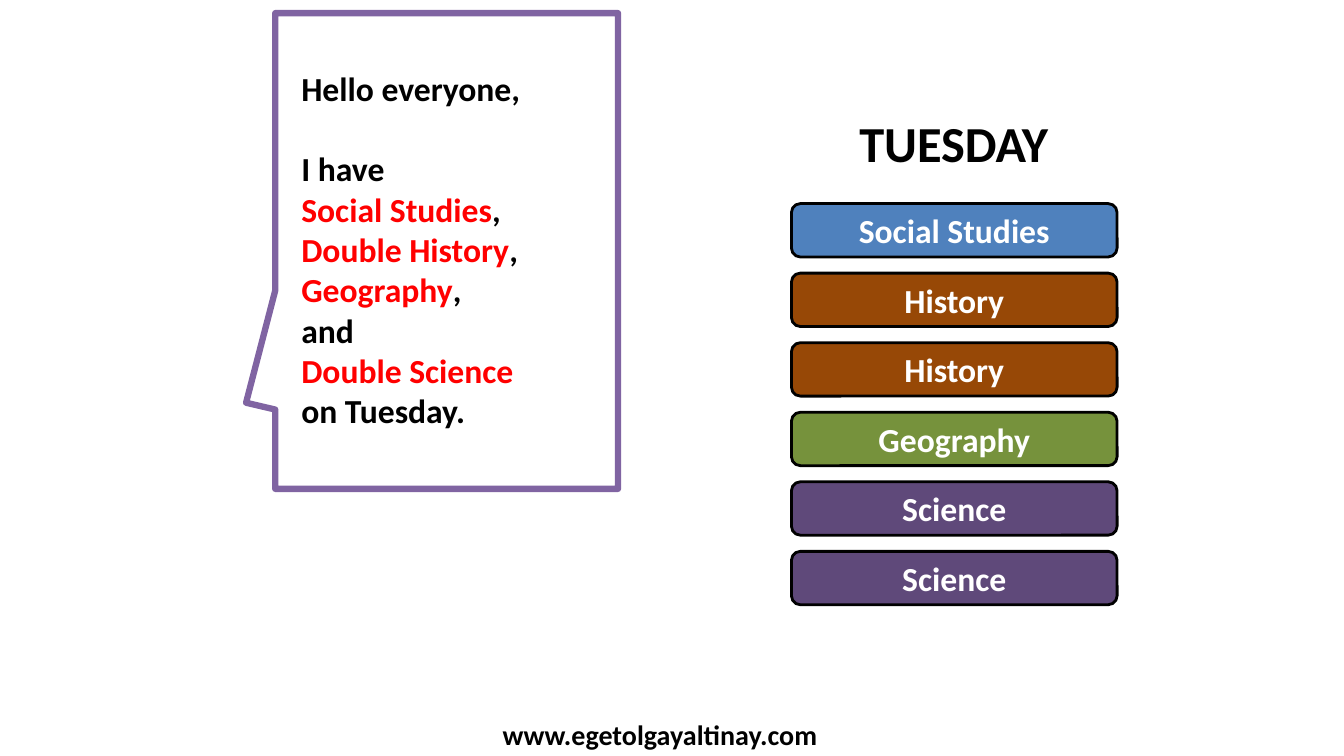
from dataclasses import dataclass
from pptx import Presentation
from pptx.dml.color import RGBColor
from pptx.enum.shapes import MSO_SHAPE
from pptx.enum.text import MSO_ANCHOR, MSO_AUTO_SIZE, PP_ALIGN
from pptx.util import Inches, Pt


@dataclass(frozen=True)
class Theme:
    """Colours, font and type sizes of the slide."""
    font: str = "Calibri"
    black: str = "000000"
    white: str = "FFFFFF"
    red: str = "FF0000"
    violet: str = "8064A2"
    blue: str = "4F81BD"
    brown: str = "974806"
    green: str = "76923C"
    purple: str = "5F497A"
    head: int = 36
    body: int = 24
    foot: int = 20
    space: int = 29


THEME = Theme()
SPEECH = [
    [("Hello everyone,", THEME.black)],
    [("I have", THEME.black)],
    [("Social Studies", THEME.red), (",", THEME.black)],
    [("Double History", THEME.red), (",", THEME.black)],
    [("Geography", THEME.red), (",", THEME.black)],
    [("and", THEME.black)],
    [("Double Science", THEME.red)],
    [("on Tuesday.", THEME.black)],
]
LESSONS = [
    ("Social Studies", THEME.blue),
    ("History", THEME.brown),
    ("History", THEME.brown),
    ("Geography", THEME.green),
    ("Science", THEME.purple),
    ("Science", THEME.purple),
]


def style(run, size, color):
    """Set the bold face, size and colour of a run."""
    font = run.font
    font.name, font.size, font.bold = THEME.font, Pt(size), True
    font.color.rgb = RGBColor.from_string(color)


def label(frame, text, size, color):
    """Write one centred line in a text frame."""
    frame.text = text
    frame.word_wrap = True
    frame.vertical_anchor = MSO_ANCHOR.MIDDLE
    line = frame.paragraphs[0]
    line.alignment = PP_ALIGN.CENTER
    style(line.runs[0], size, color)


def panel(slide, kind, box, fill, edge, width):
    """Draw a filled shape with an outline in the box."""
    shape = slide.shapes.add_shape(kind, *map(Inches, box))
    shape.shadow.inherit = False
    shape.fill.solid()
    shape.fill.fore_color.rgb = RGBColor.from_string(fill)
    shape.line.color.rgb = RGBColor.from_string(edge)
    shape.line.width = Pt(width)
    return shape


def title(slide, box):
    """Place the day in the title placeholder."""
    day = slide.shapes.title
    day.left, day.top, day.width, day.height = map(Inches, box)
    label(day.text_frame, "TUESDAY", THEME.head, THEME.black)
    day.text_frame.auto_size = MSO_AUTO_SIZE.NONE


def speech(slide, box):
    """Draw the speech bubble and its lines."""
    left, top, width, height = box
    bubble = panel(slide, MSO_SHAPE.RECTANGULAR_CALLOUT, box,
                   THEME.white, THEME.violet, 4.5)
    bubble.adjustments[0] = -0.585
    bubble.adjustments[1] = 0.319
    area = (left + 0.16, top + 0.49, width + 0.06, height - 0.98)
    frame = slide.shapes.add_textbox(*map(Inches, area)).text_frame
    frame.word_wrap = True
    for i, parts in enumerate(SPEECH):
        line = frame.add_paragraph() if i else frame.paragraphs[0]
        for text, color in parts:
            run = line.add_run()
            run.text = text
            style(run, THEME.body, color)
    frame.paragraphs[1].space_before = Pt(THEME.space)


def lessons(slide, box):
    """Stack the lesson bars evenly from top to bottom of the box."""
    left, top, width, height = box
    bar = 0.53
    step = (height - bar) / (len(LESSONS) - 1)
    for i, (name, fill) in enumerate(LESSONS):
        shape = panel(slide, MSO_SHAPE.ROUNDED_RECTANGLE,
                      (left, top + i * step, width, bar),
                      fill, THEME.black, 2)
        label(shape.text_frame, name, THEME.body, THEME.white)


def footer(slide, box):
    """Write the web address at the foot."""
    frame = slide.shapes.add_textbox(*map(Inches, box)).text_frame
    label(frame, "www.egetolgayaltinay.com", THEME.foot, THEME.black)


def main():
    """Build the slide and save it."""
    deck = Presentation()
    deck.slide_width, deck.slide_height = Inches(13.33), Inches(7.5)
    slide = deck.slides.add_slide(deck.slide_layouts[5])
    footer(slide, (4.46, 7.06, 4.17, 0.44))
    speech(slide, (2.73, 0.13, 3.4, 4.72))
    lessons(slide, (7.85, 2.02, 3.23, 3.98))
    title(slide, (8.01, 1.15, 2.9, 0.53))
    deck.save("out.pptx")


if __name__ == "__main__":
    main()
